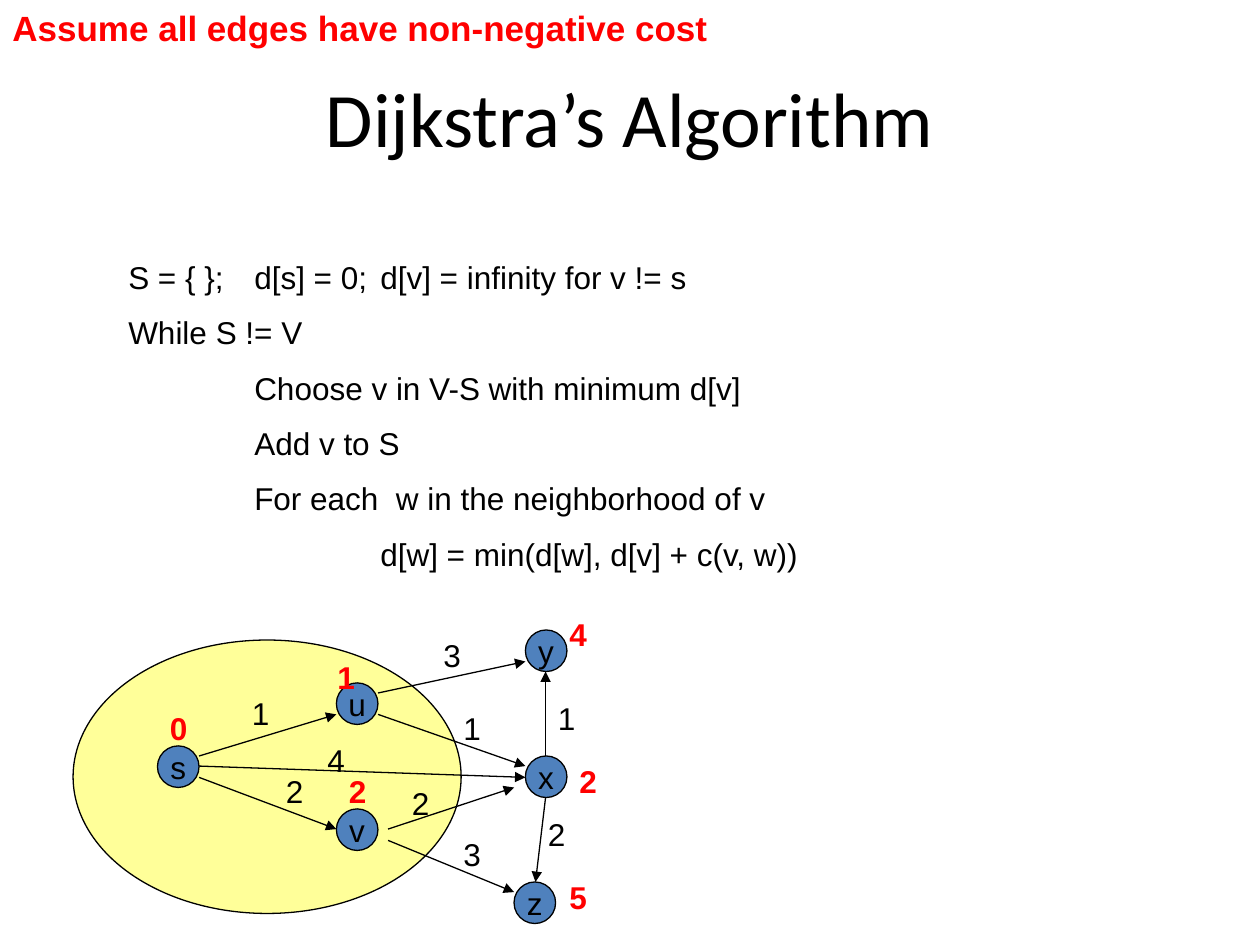
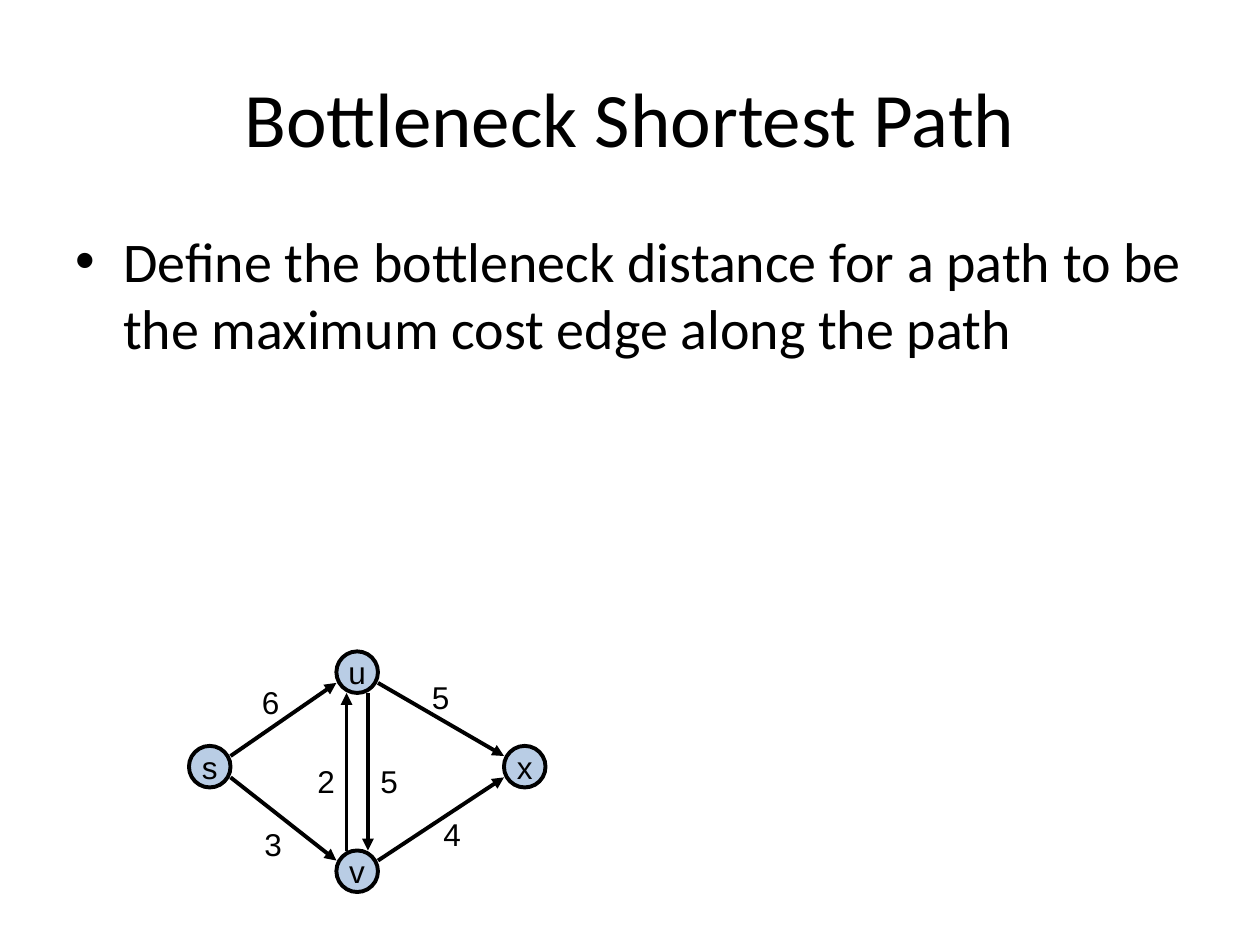
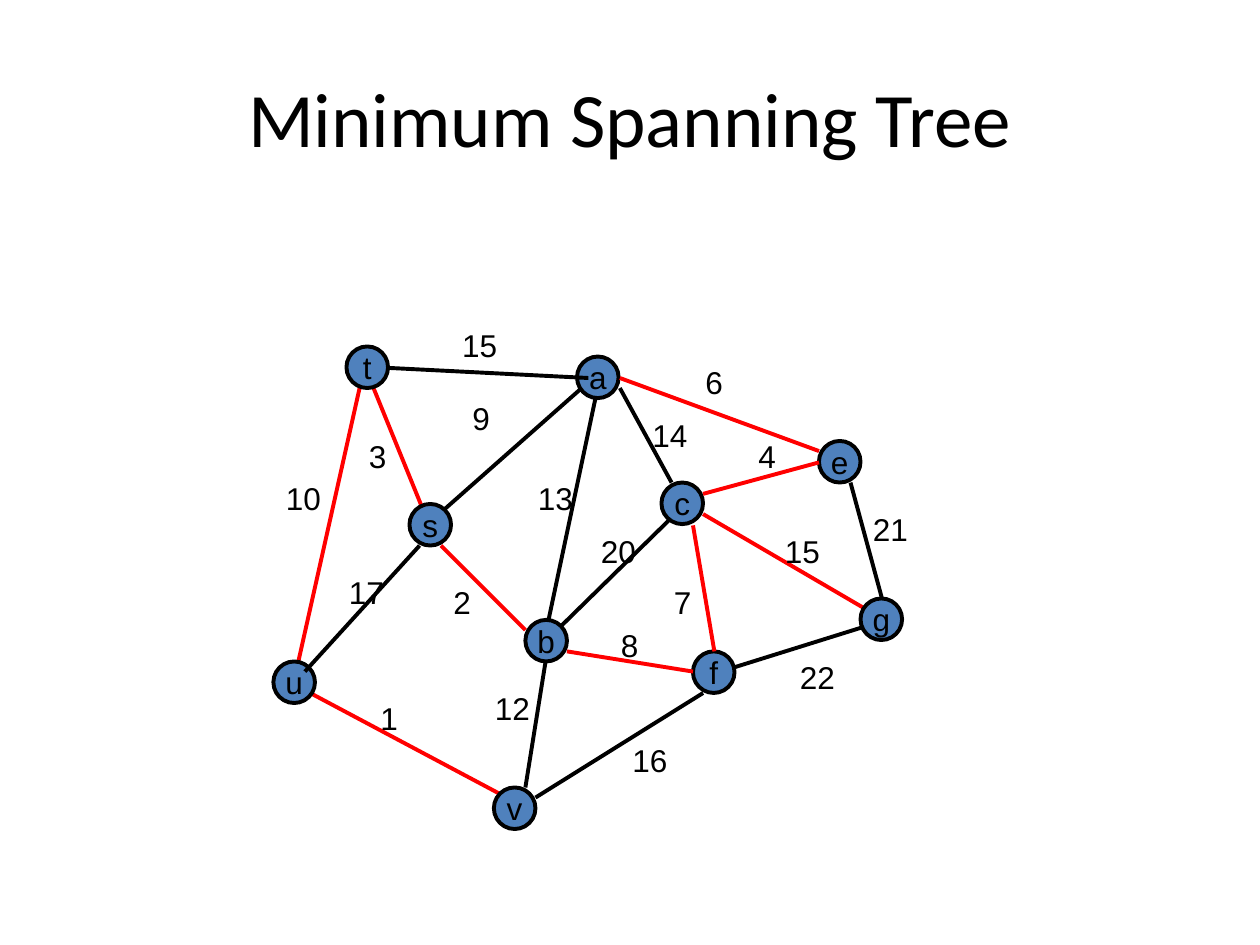
from dataclasses import dataclass
from typing import NamedTuple

from lxml.etree import SubElement as Sub
from pptx import Presentation
from pptx.dml.color import RGBColor as Rgb
from pptx.enum.shapes import MSO_CONNECTOR as Conn, MSO_SHAPE as Form
from pptx.enum.text import MSO_ANCHOR as Anchor, PP_ALIGN as Align
from pptx.oxml.ns import qn
from pptx.shapes.autoshape import Shape
from pptx.slide import Slide
from pptx.text.text import TextFrame
from pptx.util import Inches, Pt


@dataclass(frozen=True)
class Theme:
    ink: str = "000000"
    red: str = "FF0000"
    blue: str = "4F81BD"
    pale: str = "B9CDE5"
    yellow: str = "FFFF99"
    head: str = "Calibri"
    text: str = "Arial"
    title: int = 44
    body: int = 32
    note: int = 20
    small: int = 18
    thin: float = 0.75
    thick: float = 2.25
    node: float = 0.33


T = Theme()


class Box(NamedTuple):
    left: float
    top: float
    width: float
    height: float


class Node(NamedTuple):
    name: str
    left: float
    top: float


class Edge(NamedTuple):
    x1: float
    y1: float
    x2: float
    y2: float
    color: str = T.ink


class Label(NamedTuple):
    text: str
    left: float
    top: float
    color: str = T.ink
    bold: bool = False


class Step(NamedTuple):
    text: str
    level: int = 0
    stops: tuple[float, ...] = ()


def write(frame: TextFrame, text: str, *, size: int = T.small, font: str = T.text,
          color: str = T.ink, bold: bool = False, align: Align = Align.LEFT,
          gap: float = 0, left: float = 0, hang: float = 0, bullet: str = "",
          stops: tuple[float, ...] = ()) -> None:
    para = frame.paragraphs[0]
    if para.runs:
        para = frame.add_paragraph()
        para.space_before = Pt(gap)
    para.alignment = align
    props = para._p.get_or_add_pPr()
    props.set("marL", str(Inches(left)))
    props.set("indent", str(Inches(-hang)))
    if bullet:
        Sub(props, qn("a:buFont"), typeface=T.text)
        Sub(props, qn("a:buChar"), char=bullet)
    if stops:
        tabs = Sub(props, qn("a:tabLst"))
        for stop in stops:
            Sub(tabs, qn("a:tab"), pos=str(Inches(stop)), algn="l")
    run = para.add_run()
    run.text = text
    run.font.size = Pt(size)
    run.font.name = font
    run.font.bold = bold
    run.font.color.rgb = Rgb.from_string(color)


def frame(slide: Slide, box: Box, wrap: bool = True,
          anchor: Anchor = Anchor.TOP) -> TextFrame:
    area = slide.shapes.add_textbox(*map(Inches, box)).text_frame
    area.word_wrap = wrap
    area.vertical_anchor = anchor
    return area


def title(slide: Slide, text: str) -> None:
    area = frame(slide, Box(0.5, 0.3, 9, 1.25), anchor=Anchor.MIDDLE)
    write(area, text, size=T.title, font=T.head, align=Align.CENTER)


def oval(slide: Slide, box: Box, fill: str, width: float) -> Shape:
    shape = slide.shapes.add_shape(Form.OVAL, *map(Inches, box))
    shape.shadow.inherit = False
    shape.fill.solid()
    shape.fill.fore_color.rgb = Rgb.from_string(fill)
    shape.line.color.rgb = Rgb.from_string(T.ink)
    shape.line.width = Pt(width)
    return shape


def nodes(slide: Slide, items: list[Node], fill: str, width: float) -> None:
    for item in items:
        box = Box(item.left, item.top, T.node, T.node)
        area = oval(slide, box, fill, width).text_frame
        area.word_wrap = False
        area.vertical_anchor = Anchor.MIDDLE
        write(area, item.name, align=Align.CENTER)


def edges(slide: Slide, items: list[Edge], width: float, arrow: bool = False) -> None:
    for item in items:
        line = slide.shapes.add_connector(Conn.STRAIGHT, *map(Inches, item[:4]))
        line.line.color.rgb = Rgb.from_string(item.color)
        line.line.width = Pt(width)
        if arrow:
            Sub(line.line._get_or_add_ln(), qn("a:tailEnd"), type="triangle")
        Sub(line._element.spPr, qn("a:effectLst"))


def labels(slide: Slide, items: list[Label]) -> None:
    for item in items:
        box = Box(item.left, item.top, 0.2 + 0.14 * len(item.text), 0.4)
        write(frame(slide, box, wrap=False), item.text,
              color=item.color, bold=item.bold)


def dijkstra(slide: Slide) -> None:
    oval(slide, Box(0.58, 5.08, 3.08, 2.17), T.yellow, T.thin)
    title(slide, "Dijkstra’s Algorithm")
    steps = [
        Step("S = { };\td[s] = 0;\td[v] = infinity for v != s", 0, (1.03, 2.28)),
        Step("While S != V"),
        Step("Choose v in V-S with minimum d[v]", 1),
        Step("Add v to S", 1),
        Step("For each  w in the neighborhood of v", 1),
        Step("d[w] = min(d[w], d[v] + c(v, w))", 2),
    ]
    code = frame(slide, Box(0.92, 2, 8.83, 2.66))
    for step in steps:
        write(code, step.text, gap=10, left=step.level, stops=step.stops)
    nodes(slide, [
        Node("s", 1.25, 5.92), Node("u", 2.67, 5.42), Node("v", 2.67, 6.42),
        Node("z", 4.08, 7), Node("y", 4.17, 5), Node("x", 4.17, 6),
    ], T.blue, T.thin)
    edges(slide, [
        Edge(1.58, 6, 2.67, 5.67), Edge(1.58, 6.17, 2.67, 6.58),
        Edge(1.58, 6.08, 4.17, 6.17), Edge(3, 5.5, 4.17, 5.25),
        Edge(3, 5.67, 4.17, 6.08), Edge(3.08, 6.58, 4.08, 6.25),
        Edge(3.08, 6.67, 4.08, 7.08), Edge(4.33, 6, 4.33, 5.33),
        Edge(4.33, 6.33, 4.25, 7),
    ], T.thin, arrow=True)
    labels(slide, [
        Label("1", 1.9, 5.46), Label("4", 2.5, 5.83), Label("3", 3.42, 5),
        Label("2", 2.17, 6.08), Label("3", 3.58, 6.58), Label("2", 3.17, 6.17),
        Label("1", 3.58, 5.58), Label("2", 4.25, 6.42), Label("1", 4.33, 5.5),
    ])
    costs = [("0", 1.25, 5.58), ("1", 2.58, 5.17), ("2", 2.67, 6.08),
             ("2", 4.5, 6), ("5", 4.42, 6.92), ("4", 4.42, 4.83)]
    labels(slide, [Label(*cost, T.red, True) for cost in costs])
    write(frame(slide, Box(0, 0, 5.83, 0.43)),
          "Assume all edges have non-negative cost",
          size=T.note, color=T.red, bold=True)


def neck(slide: Slide) -> None:
    title(slide, "Bottleneck Shortest Path")
    write(frame(slide, Box(0.5, 1.75, 9, 1.83)),
          "Define the bottleneck distance for a path to be "
          "the maximum cost edge along the path",
          size=T.body, font=T.head, left=0.38, hang=0.38, bullet="•")
    nodes(slide, [
        Node("s", 1.5, 5.92), Node("v", 2.67, 6.75),
        Node("x", 4, 5.92), Node("u", 2.67, 5.17),
    ], T.pale, T.thick)
    edges(slide, [
        Edge(1.83, 6, 2.67, 5.42), Edge(2.75, 6.75, 2.75, 5.5),
        Edge(1.83, 6.17, 2.67, 6.83), Edge(3, 5.42, 4, 6),
        Edge(3, 6.83, 4, 6.17), Edge(2.92, 5.5, 2.92, 6.75),
    ], T.thick, arrow=True)
    labels(slide, [
        Label("6", 1.98, 5.37), Label("5", 3.33, 5.33), Label("5", 2.92, 6),
        Label("3", 2, 6.5), Label("4", 3.42, 6.42), Label("2", 2.42, 6),
    ])


def tree(slide: Slide) -> None:
    edges(slide, [
        Edge(5.58, 4.08, 7, 4.91, T.red), Edge(5.72, 5.33, 7, 4.93),
        Edge(2.33, 5.43, 4.06, 6.35, T.red), Edge(2.92, 2.97, 3.4, 4.15, T.red),
        Edge(2.89, 2.92, 2.33, 5.42, T.red), Edge(3.44, 4.12, 4.73, 2.98),
        Edge(4.76, 3, 4.32, 5.08), Edge(5.4, 4.04, 4.34, 5.08),
    ], T.thick)
    title(slide, "Minimum Spanning Tree")
    nodes(slide, [
        Node("a", 4.58, 2.83), Node("b", 4.17, 4.92), Node("c", 5.25, 3.83),
        Node("s", 3.25, 4), Node("e", 6.5, 3.5), Node("g", 6.83, 4.75),
        Node("f", 5.5, 5.17), Node("t", 2.75, 2.75), Node("u", 2.17, 5.25),
        Node("v", 3.92, 6.25),
    ], T.blue, T.thick)
    edges(slide, [
        Edge(4.92, 3, 6.5, 3.58, T.red), Edge(4.92, 3.08, 5.33, 3.83),
        Edge(3.5, 4.33, 4.17, 5, T.red), Edge(4.5, 5.17, 5.5, 5.33, T.red),
        Edge(5.5, 4.17, 5.67, 5.17, T.red), Edge(5.58, 3.92, 6.5, 3.67, T.red),
        Edge(6.75, 3.83, 7, 4.75), Edge(2.42, 5.33, 3.33, 4.33),
        Edge(4.17, 6.25, 4.33, 5.25), Edge(4.25, 6.33, 5.58, 5.5),
        Edge(3.08, 2.92, 4.67, 3),
    ], T.thick)
    labels(slide, [
        Label("9", 3.65, 3.12), Label("2", 3.5, 4.58), Label("13", 4.17, 3.75),
        Label("6", 5.5, 2.83), Label("4", 5.92, 3.42), Label("21", 6.83, 4),
        Label("15", 6.13, 4.17), Label("7", 5.25, 4.58), Label("20", 4.67, 4.17),
        Label("14", 5.08, 3.25), Label("15", 3.57, 2.54), Label("10", 2.17, 3.75),
        Label("1", 2.92, 5.5), Label("8", 4.83, 4.92), Label("12", 3.83, 5.42),
        Label("16", 4.92, 5.83), Label("22", 6.25, 5.17), Label("17", 2.67, 4.5),
        Label("3", 2.83, 3.42),
    ])


def main() -> None:
    deck = Presentation()
    deck.slide_width, deck.slide_height = Inches(10), Inches(7.5)
    for draw in (dijkstra, neck, tree):
        draw(deck.slides.add_slide(deck.slide_layouts[6]))
    deck.save("out.pptx")


if __name__ == "__main__":
    main()
